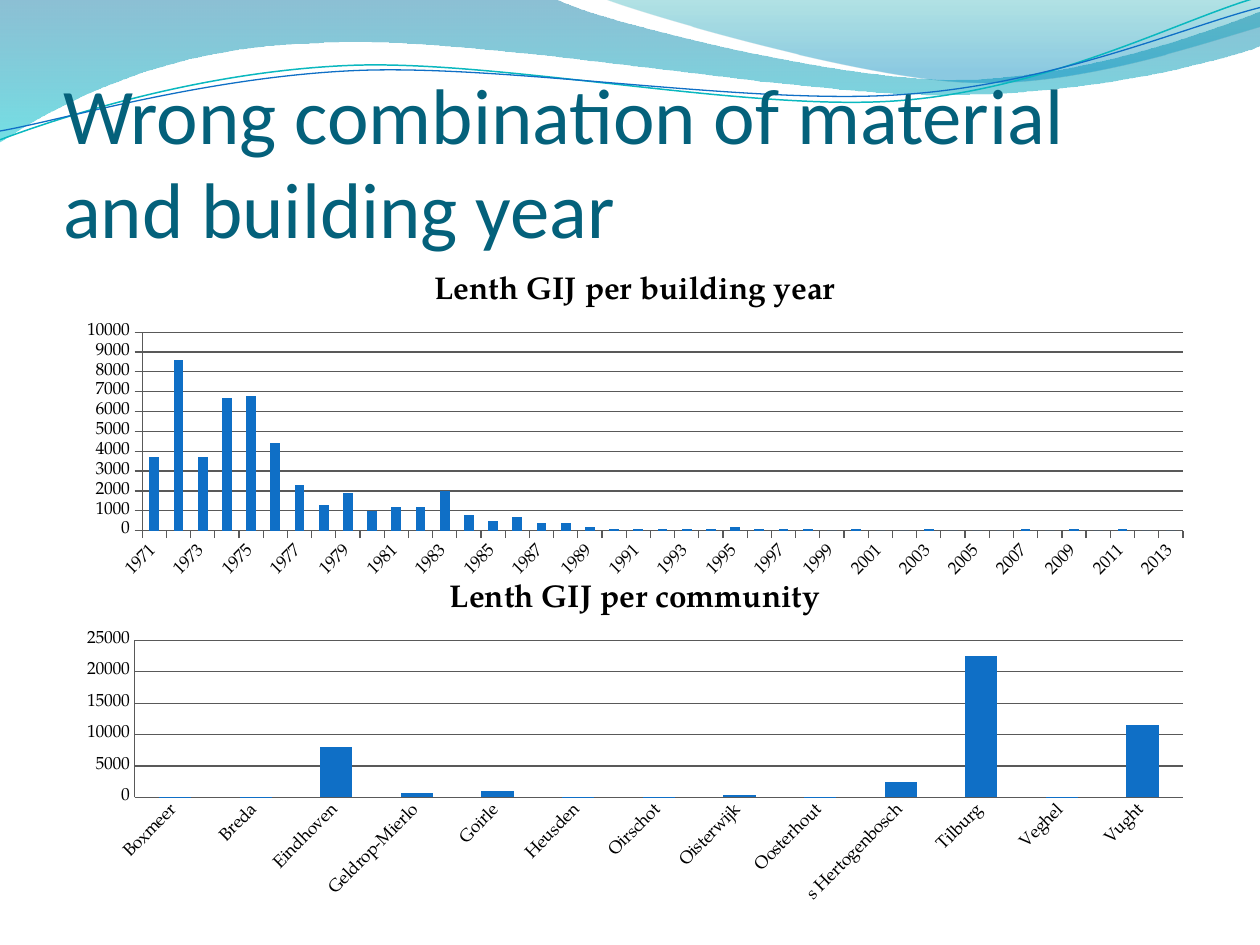
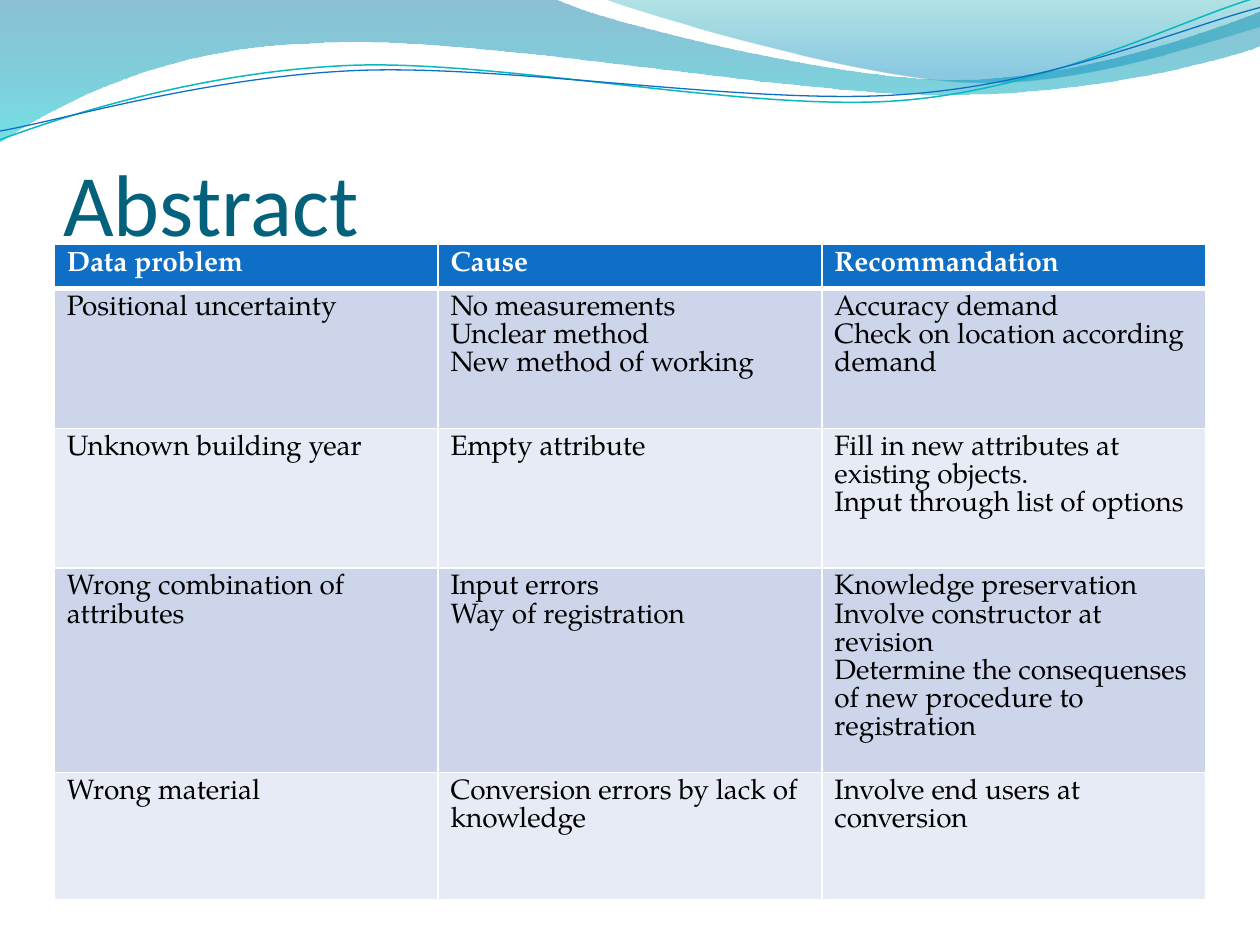
import pptx
import pptx.chart.data
import pptx.dml.color
import pptx.enum.chart
import pptx.enum.text
import pptx.oxml
import pptx.oxml.ns
import pptx.util

Inches, Pt = pptx.util.Inches, pptx.util.Pt
qn = pptx.oxml.ns.qn

# ---- Shared style ----
COLORS = {
    "title": "04617B", "accent": "0F6FC6", "teal": "0AB8BF", "axis": "595959",
    "text": "000000", "white": "FFFFFF", "odd_row": "CCD5EA", "even_row": "E7EBF5",
    "band_top": "0074A1", "band_bottom": "00C6CF",
    "crest_top": "00A1A9", "crest_bottom": "008BBF",
}
HEAD_FONT, BODY_FONT = "Calibri", "TeX Gyre Pagella"
WIDTH, HEIGHT = 10, 7.5
MARGIN = 0.05 * WIDTH
TITLE_BOX = (MARGIN, 0.77, WIDTH - 2 * MARGIN, 1.25)

# Waves in inches: a start point, then lines (2 numbers) and curves (6 numbers).
# Bands have gradient stops (position, colour, opacity); strands have a line.
WAVES = [
    {"start": (0, 0),
     "steps": [(4.4, -0.01), (4.76, 0.17, 6.64, 0.63, 7.58, 0.63),
               (8.53, 0.63, 9.58, 0.26, 10, 0.09), (10.01, 0.36),
               (9.83, 0.44, 8.7, 0.76, 7.46, 0.75),
               (6.22, 0.75, 3.82, 0.28, 2.57, 0.34),
               (1.29, 0.36, 0.46, 0.83, -0.01, 1.13)],
     "stops": [(0, "band_top", 45), (1, "band_bottom", 55)]},
    {"start": (4.79, -0.01),
     "steps": [(5.09, 0.11, 6.82, 0.62, 7.69, 0.65),
               (8.56, 0.69, 9.61, 0.32, 10, 0.21), (10, 0)],
     "stops": [(0, "crest_top", 30), (0.8, "crest_bottom", 45)]},
    {"start": (0, 1.11),
     "steps": [(0.48, 0.93, 1.58, 0.57, 2.77, 0.52),
               (3.95, 0.47, 5.93, 0.89, 7.13, 0.8),
               (8.33, 0.71, 9.38, 0.15, 9.98, -0.02)],
     "line": ("teal", 0.85)},
    {"start": (0, 1.04),
     "steps": [(0.47, 0.96, 1.64, 0.61, 2.83, 0.56),
               (4.03, 0.51, 5.97, 0.84, 7.17, 0.75),
               (8.36, 0.67, 9.41, 0.21, 10, 0.06)],
     "line": ("accent", 0.75)},
]

# ---- Content ----
YEAR_LENGTHS = [
    3700, 8600, 3700, 6700, 6800, 4400, 2300, 1300, 1900, 1000, 1200, 1200, 2000, 800,
    500, 700, 400, 400, 200, 100, 100, 100, 100, 100, 200, 100, 100, 100, 0, 100,
    0, 0, 100, 0, 0, 0, 100, 0, 100, 0, 100, 0, 0]
COMMUNITY_LENGTHS = {
    "Boxmeer": 100, "Breda": 100, "Eindhoven": 8000, "Geldrop-Mierlo": 700,
    "Goirle": 1000, "Heusden": 100, "Oirschot": 100, "Oisterwijk": 300,
    "Oosterhout": 100, "s Hertogenbosch": 2500, "Tilburg": 22500, "Veghel": 100,
    "Vught": 11600}
CHARTS = [
    {"title": "Lenth GIJ per building year", "top": 2.02, "height": 2.63,
     "data": {str(1971 + i): v for i, v in enumerate(YEAR_LENGTHS)},
     "max": 10000, "step": 1000, "tick": "OUTSIDE", "skip": 2},
    {"title": "Lenth GIJ per community", "top": 4.46, "height": 2.77,
     "data": COMMUNITY_LENGTHS,
     "max": 25000, "step": 5000, "tick": "NONE", "skip": 1},
]
CHART_LEFT, CHART_WIDTH = 0.51, 9.06

ABSTRACT = [
    ("Data problem", "Cause", "Recommandation"),
    ("Positional uncertainty",
     "No measurements\nUnclear method\nNew method of working",
     "Accuracy demand\nCheck on location according demand"),
    ("Unknown building year", "Empty attribute",
     "Fill in new attributes at existing objects.\nInput through list of options"),
    ("Wrong combination of attributes", "Input errors\nWay of registration",
     "Knowledge preservation\nInvolve constructor at revision\n"
     "Determine the consequenses of new procedure to registration"),
    ("Wrong material", "Conversion errors by lack of knowledge",
     "Involve end users at conversion"),
]
ROW_HEIGHTS = [0.35, 1.11, 1.11, 1.62, 1.01]
TABLE_LEFT, TABLE_TOP, TABLE_WIDTH = 0.43, 1.94, 9.14


def rgb(name):
    return pptx.dml.color.RGBColor.from_string(COLORS[name])


def set_font(font, name, size, color, bold=False):
    font.name, font.size, font.bold = name, Pt(size), bold
    font.color.rgb = rgb(color)


def add_xml(parent, tag, **attributes):
    child = pptx.oxml.parse_xml(f'<{tag} {pptx.oxml.ns.nsdecls("a", "c")}/>')
    for key, value in attributes.items():
        child.set(key, str(value))
    parent.append(child)
    return child


# ---- Waves on the master ----
def bend_segments(element, steps):
    """Join each three segments that stand for a curve into one Bézier segment."""
    segments = iter(list(element.iter(qn("a:lnTo"))))
    for step in steps:
        group = [next(segments) for _ in range(len(step) // 2)]
        if len(group) == 1:
            continue
        outline = group[0].getparent()
        curve = add_xml(outline, "a:cubicBezTo")
        group[0].addprevious(curve)
        for segment in group:
            curve.append(segment[0])
            outline.remove(segment)


def add_wave(s, wave):
    points = [(Inches(x), Inches(y)) for step in wave["steps"]
              for x, y in zip(step[::2], step[1::2])]
    builder = s.shapes.build_freeform(*map(Inches, wave["start"]), scale=1.0)
    builder.add_line_segments(points, close="stops" in wave)
    sp = builder.convert_to_shape()
    bend_segments(sp._element, wave["steps"])
    sp.shadow.inherit = False
    if "stops" in wave:
        sp.line.fill.background()
        sp.fill.gradient()
        sp.fill.gradient_angle = 270
        for stop, (position, color, opacity) in zip(sp.fill.gradient_stops, wave["stops"]):
            stop.position = position
            stop.color.rgb = rgb(color)
            add_xml(stop._gs.find(qn("a:srgbClr")), "a:alpha", val=opacity * 1000)
    else:
        color, width = wave["line"]
        sp.fill.background()
        sp.line.color.rgb = rgb(color)
        sp.line.width = Pt(width)
    return sp


def add_waves_to_master(prs, s):
    title = prs.slide_master.placeholders[0]._element
    for i, wave in enumerate(WAVES):
        element = add_wave(s, wave)._element
        element.nvSpPr.cNvPr.set("id", str(100 + i))
        title.addprevious(element)


# ---- Slide parts ----
def add_slide(prs, title, size):
    s = prs.slides.add_slide(prs.slide_layouts[5])
    sp = s.shapes.title
    sp.left, sp.top, sp.width, sp.height = map(Inches, TITLE_BOX)
    tf = sp.text_frame
    tf.text = title
    tf.word_wrap = True
    tf.auto_size = pptx.enum.text.MSO_AUTO_SIZE.NONE
    tf.vertical_anchor = pptx.enum.text.MSO_ANCHOR.BOTTOM
    tf.margin_left = tf.margin_right = tf.margin_bottom = 0
    tf.margin_top = Inches(0.05)
    p = tf.paragraphs[0]
    p.alignment = pptx.enum.text.PP_ALIGN.LEFT
    set_font(p.font, HEAD_FONT, size, "title")
    return s


def add_column_chart(s, chart_spec):
    data = pptx.chart.data.CategoryChartData()
    data.categories = list(chart_spec["data"])
    data.add_series("Series 1", list(chart_spec["data"].values()))
    chart = s.shapes.add_chart(
        pptx.enum.chart.XL_CHART_TYPE.COLUMN_CLUSTERED,
        Inches(CHART_LEFT), Inches(chart_spec["top"]),
        Inches(CHART_WIDTH), Inches(chart_spec["height"]), data).chart
    set_font(chart.font, BODY_FONT, 10, "text")
    chart.has_legend = False
    chart.has_title = True
    tf = chart.chart_title.text_frame
    tf.text = chart_spec["title"]
    set_font(tf.paragraphs[0].font, BODY_FONT, 18, "text", bold=True)
    chart.chart_title.include_in_layout = False

    # Columns
    plot = chart.plots[0]
    plot.gap_width = 150
    plot.vary_by_categories = False
    fill = plot.series[0].format.fill
    fill.solid()
    fill.fore_color.rgb = rgb("accent")

    # Axes
    names, lengths = chart.category_axis, chart.value_axis
    tick = pptx.enum.chart.XL_TICK_MARK[chart_spec["tick"]]
    lengths.minimum_scale, lengths.maximum_scale = 0, chart_spec["max"]
    lengths.major_unit = chart_spec["step"]
    lengths.has_major_gridlines = True
    for axis in (names, lengths):
        axis.major_tick_mark = tick
        axis.minor_tick_mark = pptx.enum.chart.XL_TICK_MARK.NONE
        set_font(axis.tick_labels.font, BODY_FONT, 10, "text")
    for line in (names.format.line, lengths.format.line, lengths.major_gridlines.format.line):
        line.color.rgb = rgb("axis")
        line.width = Pt(0.75)
    body = names._element.find(qn("c:txPr")).find(qn("a:bodyPr"))
    body.set("rot", str(-45 * 60000))
    skip = add_xml(names._element, "c:tickLblSkip", val=chart_spec["skip"])
    names._element.find(qn("c:noMultiLvlLbl")).addprevious(skip)


def set_borders(cell, row):
    props = cell._tc.get_or_add_tcPr()
    widths = {"L": 1, "R": 1, "T": 3 if row == 1 else 1, "B": 3 if row == 0 else 1}
    for i, (side, width) in enumerate(widths.items()):
        line = add_xml(props, f"a:ln{side}", w=Pt(width))
        add_xml(add_xml(line, "a:solidFill"), "a:srgbClr", val=COLORS["white"])
        props.insert(i, line)


def add_abstract_table(s):
    columns = len(ABSTRACT[0])
    table = s.shapes.add_table(
        len(ABSTRACT), columns, Inches(TABLE_LEFT), Inches(TABLE_TOP),
        Inches(TABLE_WIDTH), Inches(sum(ROW_HEIGHTS))).table
    table.horz_banding = False
    for column in table.columns:
        column.width = Inches(TABLE_WIDTH / columns)
    for r, texts in enumerate(ABSTRACT):
        table.rows[r].height = Inches(ROW_HEIGHTS[r])
        header = r == 0
        fill = "accent" if header else ("even_row", "odd_row")[r % 2]
        for c, text in enumerate(texts):
            cell = table.cell(r, c)
            cell.text = text
            cell.fill.solid()
            cell.fill.fore_color.rgb = rgb(fill)
            set_borders(cell, r)
            for p in cell.text_frame.paragraphs:
                p.line_spacing = Pt(16.1)
                set_font(p.font, BODY_FONT, 16, "white" if header else "text", header)


def main():
    prs = pptx.Presentation()
    prs.slide_width, prs.slide_height = Inches(WIDTH), Inches(HEIGHT)

    s = add_slide(prs, "Wrong combination of material and building year", 45)
    add_waves_to_master(prs, s)
    for chart_spec in CHARTS:
        add_column_chart(s, chart_spec)

    s = add_slide(prs, "Abstract", 50)
    add_abstract_table(s)
    prs.save("out.pptx")


if __name__ == "__main__":
    main()
